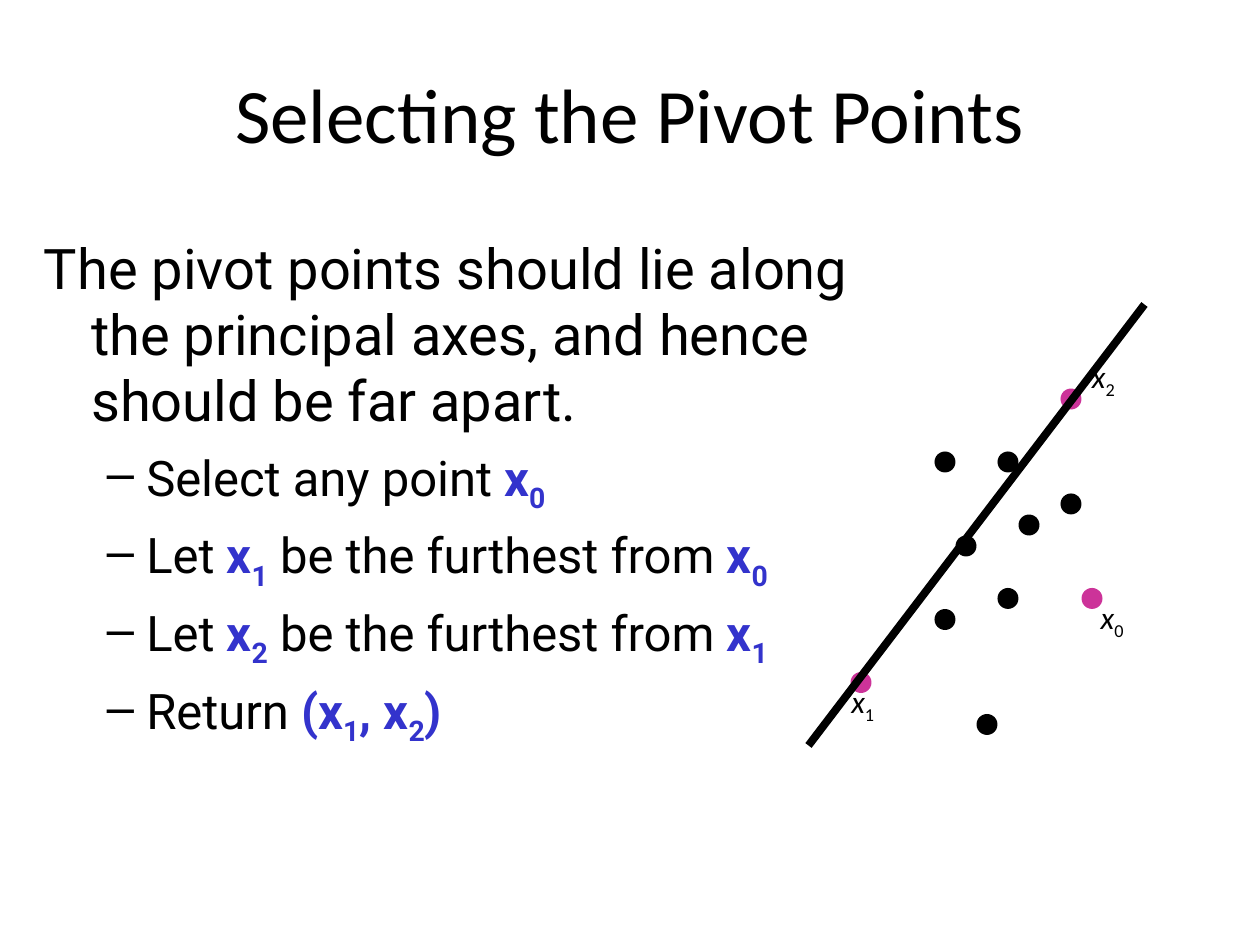
from dataclasses import dataclass

from lxml.etree import SubElement
from pptx import Presentation
from pptx.dml.color import RGBColor
from pptx.enum.shapes import MSO_CONNECTOR as Connector, MSO_SHAPE as Shape
from pptx.enum.text import MSO_ANCHOR as Anchor, PP_ALIGN as Align
from pptx.oxml.ns import qn
from pptx.util import Pt


@dataclass(frozen=True)
class Theme:
    black: str = "000000"
    blue: str = "3333CC"
    pink: str = "CC3399"
    heading_font: str = "Calibri"
    body_font: str = "Roboto"
    title_size: int = 44
    lead_size: int = 32
    step_size: int = 28
    label_size: int = 18
    line_spacing: float = 0.98


THEME = Theme()

TITLE = "Selecting the Pivot Points"
LEAD = "The pivot points should lie along the principal axes, and hence should be far apart."
# Each span is (text, role); roles are plain, math and sub.
STEPS = [
    [("Select any point ", "plain"), ("x", "math"), ("0", "sub")],
    [("Let ", "plain"), ("x", "math"), ("1", "sub"),
     (" be the furthest from ", "plain"), ("x", "math"), ("0", "sub")],
    [("Let ", "plain"), ("x", "math"), ("2", "sub"),
     (" be the furthest from ", "plain"), ("x", "math"), ("1", "sub")],
    [("Return ", "plain"), ("(x", "math"), ("1", "sub"),
     (", x", "math"), ("2", "sub"), (")", "math")],
]

# Centres of the dots, and of the labels beside the pivots
DOTS = [(540, 264), (576, 264), (552, 312), (612, 288), (564, 414),
        (540, 354), (576, 342), (588, 300)]
PIVOTS = [("0", (624, 342), (635.5, 354)),
          ("1", (492, 390), (493, 402)),
          ("2", (612, 228), (630.5, 216))]
AXIS = (462, 426, 654, 174)
AXIS_WIDTH = 4.5
DOT_SIZE = 12
LABEL_SIZE = (35, 36)


def color(value):
    return RGBColor.from_string(value)


def add_box(slide, left, top, width, height, anchor=Anchor.TOP, wrap=True):
    frame = slide.shapes.add_textbox(Pt(left), Pt(top), Pt(width), Pt(height)).text_frame
    frame.word_wrap = wrap
    frame.vertical_anchor = anchor
    return frame


def format_para(para, align=Align.LEFT, before=0, margin=0, hanging=0, bullet=None):
    para.alignment = align
    para.line_spacing = THEME.line_spacing
    para.space_before = Pt(before)
    props = para._p.get_or_add_pPr()
    props.set("marL", str(Pt(margin)))
    props.set("indent", str(-Pt(hanging)))
    if bullet:
        bullet_color = SubElement(props, qn("a:buClr"))
        SubElement(bullet_color, qn("a:srgbClr"), val=THEME.black)
        SubElement(props, qn("a:buChar"), char=bullet)


def add_span(para, text, font, size, ink=THEME.black, bold=False, italic=False, sub=False):
    span = para.add_run()
    span.text = text
    span.font.name = font
    span.font.size = Pt(size)
    span.font.bold = bold
    span.font.italic = italic
    span.font.color.rgb = color(ink)
    if sub:
        span.font._element.set("baseline", "-25000")


def add_title(slide):
    para = add_box(slide, 36, 10, 648, 113, Anchor.MIDDLE).paragraphs[0]
    format_para(para, Align.CENTER)
    add_span(para, TITLE, THEME.heading_font, THEME.title_size)


def add_body(slide):
    frame = add_box(slide, 18, 132, 486, 324)
    lead = frame.paragraphs[0]
    format_para(lead, before=8, margin=27, hanging=27)
    add_span(lead, LEAD, THEME.body_font, THEME.lead_size)
    for step in STEPS:
        para = frame.add_paragraph()
        format_para(para, before=7, margin=58.5, hanging=22.5, bullet="–")
        for text, role in step:
            is_math = role != "plain"
            add_span(para, text, THEME.body_font, THEME.step_size,
                     THEME.blue if is_math else THEME.black,
                     bold=is_math, sub=role == "sub")


def add_dot(slide, center, ink):
    x, y = center
    dot = slide.shapes.add_shape(Shape.OVAL, Pt(x - DOT_SIZE / 2), Pt(y - DOT_SIZE / 2),
                                 Pt(DOT_SIZE), Pt(DOT_SIZE))
    dot.shadow.inherit = False
    dot.fill.solid()
    dot.fill.fore_color.rgb = color(ink)
    dot.line.fill.background()


def add_label(slide, index, center):
    (x, y), (width, height) = center, LABEL_SIZE
    para = add_box(slide, x - width / 2, y - height / 2, width, height,
                   Anchor.MIDDLE, wrap=False).paragraphs[0]
    format_para(para, Align.CENTER)
    add_span(para, "x", THEME.heading_font, THEME.label_size, italic=True)
    add_span(para, index, THEME.heading_font, THEME.label_size, sub=True)


def add_scatter(slide):
    for center in DOTS:
        add_dot(slide, center, THEME.black)
    for index, center, label_center in PIVOTS:
        add_dot(slide, center, THEME.pink)
        add_label(slide, index, label_center)
    axis = slide.shapes.add_connector(Connector.STRAIGHT, *map(Pt, AXIS))
    axis.line.color.rgb = color(THEME.black)
    axis.line.width = Pt(AXIS_WIDTH)
    SubElement(axis._element.spPr, qn("a:effectLst"))


def main():
    deck = Presentation()
    deck.slide_width, deck.slide_height = Pt(720), Pt(540)
    slide = deck.slides.add_slide(deck.slide_layouts[6])
    add_title(slide)
    add_body(slide)
    add_scatter(slide)
    deck.save("out.pptx")


if __name__ == "__main__":
    main()
